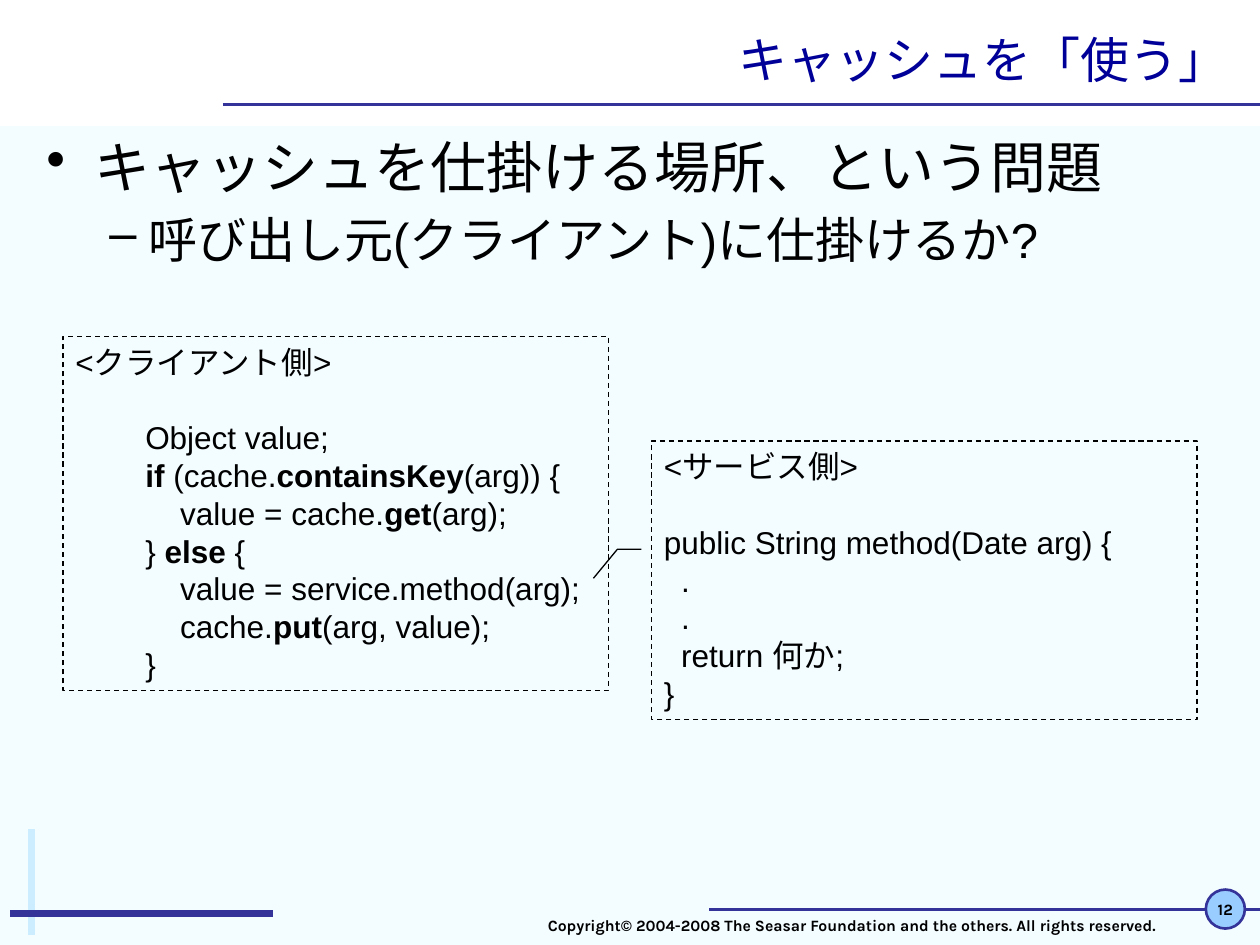
import pptx
import pptx.dml.color
import pptx.enum.dml
import pptx.enum.shapes
import pptx.enum.text
import pptx.oxml
import pptx.oxml.ns
import pptx.util
from pptx.util import Inches

SHAPE = pptx.enum.shapes.MSO_SHAPE
ALIGN = pptx.enum.text.PP_ALIGN
ANCHOR = pptx.enum.text.MSO_ANCHOR


def color(hex_code):
    return pptx.dml.color.RGBColor.from_string(hex_code)


def write(shape, text, size=18, font="Arial", ink="000000", bold=False, align=ALIGN.LEFT,
          anchor=ANCHOR.TOP, wrap=True, bullets=(), gaps=()):
    """Write one paragraph per line; *...* marks bold, bullets hold (sign, left, hanging, size)."""
    frame = shape.text_frame
    frame.word_wrap = wrap
    frame.vertical_anchor = anchor
    for i, line in enumerate(text.split("\n")):
        paragraph = frame.paragraphs[0] if i == 0 else frame.add_paragraph()
        paragraph.alignment = align
        if i < len(gaps):
            paragraph.space_before = pptx.util.Pt(gaps[i])
        line_size = size
        if i < len(bullets):
            sign, left, hanging, line_size = bullets[i]
            properties = paragraph._p.get_or_add_pPr()
            properties.set("marL", str(Inches(left)))
            properties.set("indent", str(-Inches(hanging)))
            mark = pptx.oxml.ns.qn("a:buChar")
            properties.append(properties.makeelement(mark, {"char": sign}))
        for j, part in enumerate(line.split("*")):
            if part:
                run = paragraph.add_run()
                run.text = part
                run.font.size = pptx.util.Pt(line_size)
                run.font.name = font
                run.font.bold = bold or j % 2 == 1
                run.font.color.rgb = color(ink)


deck = pptx.Presentation()
deck.slide_width, deck.slide_height = Inches(10), Inches(7.5)
slide = deck.slides.add_slide(deck.slide_layouts[6])
slide.background.fill.solid()
slide.background.fill.fore_color.rgb = color("F3FCFF")
shapes = slide.shapes

# White title band
band = shapes.add_shape(SHAPE.RECTANGLE, 0, 0, Inches(10), Inches(1))
band.shadow.inherit = False
band.fill.solid()
band.fill.fore_color.rgb = color("FFFFFF")
band.line.fill.background()

# Decorative rules
for x1, y1, x2, y2, rule_color, width in [
    (0.25, 7.42, 0.25, 6.58, "CCECFF", 4.5),
    (0.08, 7.25, 2.17, 7.25, "333399", 4.5),
    (5.63, 7.22, 10, 7.22, "333399", 1.5),
    (1.77, 0.83, 10, 0.83, "333399", 1.5),
]:
    rule = shapes.add_connector(pptx.enum.shapes.MSO_CONNECTOR.STRAIGHT,
                                Inches(x1), Inches(y1), Inches(x2), Inches(y2))
    rule.line.color.rgb = color(rule_color)
    rule.line.width = pptx.util.Pt(width)
    rule._element.spPr.append(pptx.oxml.parse_xml(
        "<a:effectLst %s/>" % pptx.oxml.ns.nsdecls("a")))

# Page number and copyright
page_badge = shapes.add_shape(SHAPE.OVAL, Inches(9.57), Inches(7.06), Inches(0.31), Inches(0.31))
page_badge.shadow.inherit = False
page_badge.fill.solid()
page_badge.fill.fore_color.rgb = color("99CCFF")
page_badge.line.color.rgb = color("333399")
page_badge.line.width = pptx.util.Pt(1.5)
write(page_badge, "12", size=9, font="Karla", bold=True, align=ALIGN.CENTER,
      anchor=ANCHOR.MIDDLE, wrap=False)

copyright_line = shapes.add_textbox(Inches(4.25), Inches(7.22), Inches(5.46), Inches(0.28))
write(copyright_line,
      "Copyright© 2004-2008 The Seasar Foundation and the others. All rights reserved.",
      size=9, font="Karla", bold=True)

# Title and question
title = shapes.add_textbox(Inches(2.17), Inches(0.17), Inches(7.67), Inches(0.59))
write(title, "キャッシュを「使う」", size=28, ink="000099", align=ALIGN.RIGHT, anchor=ANCHOR.MIDDLE)

question = shapes.add_textbox(Inches(0.27), Inches(1), Inches(9.47), Inches(1.3))
write(question, "キャッシュを仕掛ける場所、という問題\n呼び出し元(クライアント)に仕掛けるか?",
      bullets=[("•", 0.38, 0.38, 32), ("–", 0.81, 0.31, 28)], gaps=[0, 5.6])

# Code on the client side and on the service side
client_code = """<クライアント側>
        Object value;
        *if* (cache.*containsKey*(arg)) {
            value = cache.*get*(arg);
        } *else* {
            value = service.method(arg);
            cache.*put*(arg, value);
        }"""
service_code = """<サービス側>
public String method(Date arg) {
  .
  .
  return 何か;
}"""
for left, top, height, code in [(0.5, 2.67, 2.81, client_code), (5.17, 3.5, 2.21, service_code)]:
    code_box = shapes.add_shape(SHAPE.RECTANGLE, Inches(left), Inches(top),
                                Inches(4.33), Inches(height))
    code_box.shadow.inherit = False
    code_box.fill.background()
    code_box.line.color.rgb = color("000000")
    code_box.line.width = pptx.util.Pt(0.75)
    code_box.line.dash_style = pptx.enum.dml.MSO_LINE.DASH
    write(code_box, code, gaps=[0, 21.6])

# Bent line from the service call to the service
outline = shapes.build_freeform(Inches(4.71), Inches(4.59))
outline.add_line_segments([(Inches(4.9), Inches(4.36)), (Inches(5.09), Inches(4.36))], close=False)
call_line = outline.convert_to_shape()
call_line.shadow.inherit = False
call_line.fill.background()
call_line.line.color.rgb = color("000000")
call_line.line.width = pptx.util.Pt(0.75)

deck.save("out.pptx")
